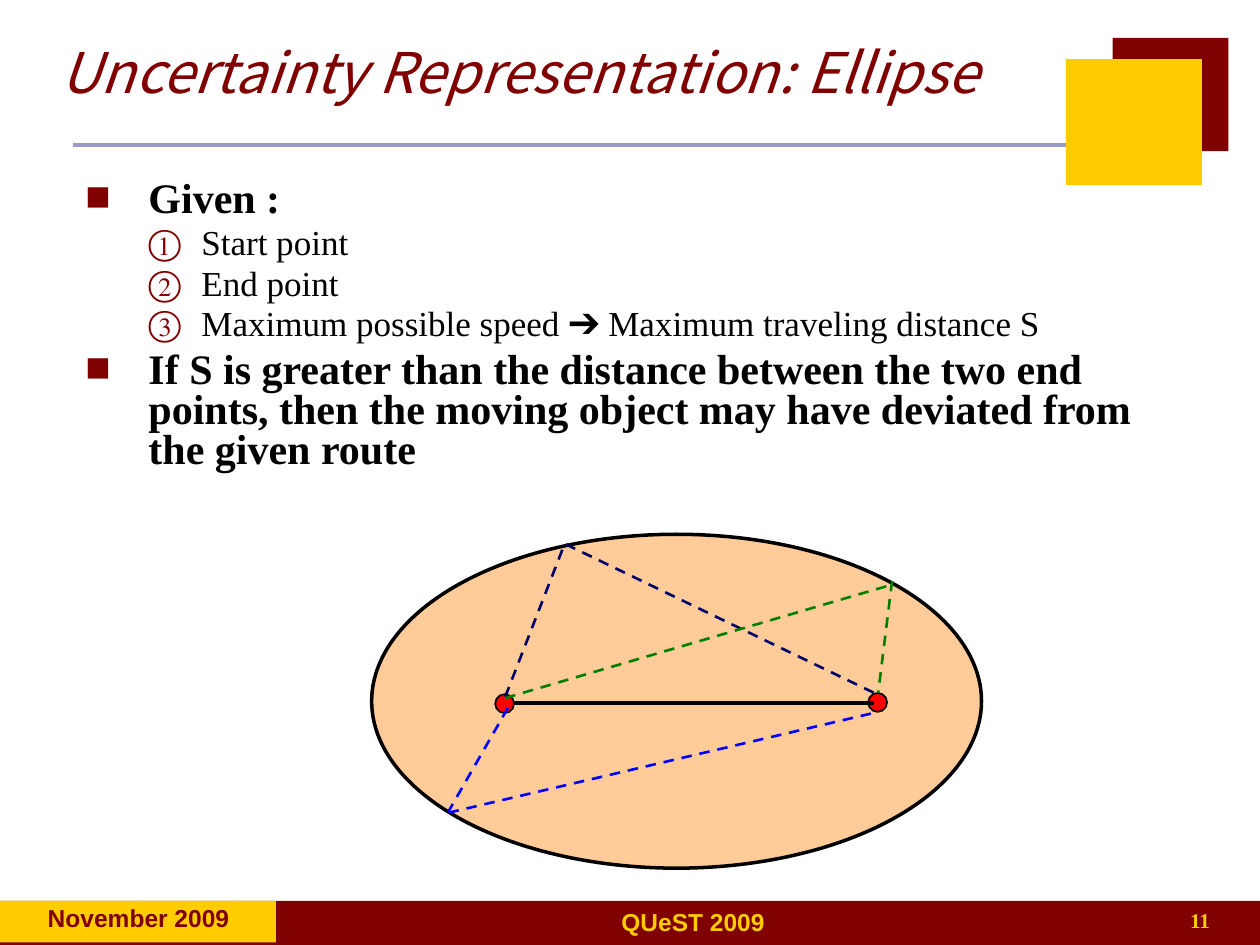
from dataclasses import dataclass

from lxml.etree import SubElement
from pptx import Presentation
from pptx.dml.color import RGBColor
from pptx.enum.dml import MSO_LINE
from pptx.enum.shapes import MSO_CONNECTOR, MSO_SHAPE
from pptx.enum.text import MSO_ANCHOR, MSO_AUTO_SIZE, PP_ALIGN
from pptx.oxml.ns import qn
from pptx.util import Inches, Pt


@dataclass(frozen=True)
class Theme:
    red: str = "800000"
    gold: str = "FFCC00"
    rule: str = "9999CC"
    peach: str = "FFCC99"
    dot: str = "FF0000"
    ink: str = "000000"
    navy: str = "000066"
    green: str = "008000"
    blue: str = "0000FF"
    sans: str = "Arial"
    serif: str = "Times New Roman"
    head: str = "Noto Sans CJK KR"
    title: int = 32
    main: int = 24
    sub: int = 20
    foot: int = 14
    page: int = 12


T = Theme()


def rgb(hue):
    return RGBColor.from_string(hue)


def place(shape, box):
    for key, val in zip(("left", "top", "width", "height"), box):
        setattr(shape, key, Inches(val))


def write(para, text, hue, **form):
    run = para.add_run()
    run.text = text
    run.font.color.rgb = rgb(hue)
    for key, val in form.items():
        setattr(run.font, key, val)


def block(slide, kind, box, fill, width=0):
    shape = slide.shapes.add_shape(kind, *map(Inches, box))
    shape.shadow.inherit = False
    shape.fill.solid()
    shape.fill.fore_color.rgb = rgb(fill)
    if width:
        shape.line.color.rgb = rgb(T.ink)
        shape.line.width = Pt(width)
    else:
        shape.line.fill.background()


def link(slide, start, end, hue, width, dash=None):
    line = slide.shapes.add_connector(
        MSO_CONNECTOR.STRAIGHT, *map(Inches, start + end))
    SubElement(line._element.spPr, qn("a:effectLst"))
    line.line.color.rgb = rgb(hue)
    line.line.width = Pt(width)
    if dash:
        line.line.dash_style = dash


def frame(slide, box):
    text = slide.shapes.add_textbox(*map(Inches, box)).text_frame
    text.word_wrap = True
    return text


def label(slide, box, text, hue, align, **form):
    para = frame(slide, box).paragraphs[0]
    para.alignment = align
    write(para, text, hue, bold=True, **form)


def bullet(para, left, hang, tag, **mark):
    props = para._p.get_or_add_pPr()
    props.set("marL", str(Inches(left)))
    props.set("indent", str(-Inches(hang)))
    tint = SubElement(props, qn("a:buClr"))
    SubElement(tint, qn("a:srgbClr"), val=T.red)
    if "char" in mark:
        SubElement(props, qn("a:buFont"), typeface=T.sans)
    SubElement(props, qn(tag), **mark)


def points(slide, box, items):
    text = frame(slide, box)
    for num, (level, words) in enumerate(items):
        para = text.add_paragraph() if num else text.paragraphs[0]
        if level:
            bullet(para, 0.92, 0.42, "a:buAutoNum", type="circleNumDbPlain")
        else:
            bullet(para, 0.5, 0.5, "a:buChar", char="■")
        size = T.sub if level else T.main
        form = {"level": level, "line_spacing": 0.8}
        if num:
            form["space_before"] = Pt(size * 0.2)
        for key, val in form.items():
            setattr(para, key, val)
        write(para, words, T.ink, name=T.serif, size=Pt(size), bold=not level)


def heading(slide, box, words):
    title = slide.shapes.title
    place(title, box)
    text = title.text_frame
    form = {"auto_size": MSO_AUTO_SIZE.NONE, "word_wrap": True,
            "vertical_anchor": MSO_ANCHOR.MIDDLE}
    for key, val in form.items():
        setattr(text, key, val)
    para = text.paragraphs[0]
    para.alignment = PP_ALIGN.LEFT
    write(para, words, T.red, name=T.head, size=Pt(T.title), italic=True)


def decor(slide):
    link(slide, (0.58, 1.15), (8.5, 1.15), T.rule, 2.25)
    for box, hue in (
        ((0, 7.15, 10, 0.35), T.red),
        ((0, 7.15, 2.19, 0.33), T.gold),
        ((8.83, 0.3, 0.92, 0.9), T.red),
        ((8.46, 0.47, 1.08, 1), T.gold),
    ):
        block(slide, MSO_SHAPE.RECTANGLE, box, hue)


def footer(slide):
    foot = {"name": T.sans, "size": Pt(T.foot)}
    label(slide, (1.89, 7.15, 7.22, 0.33), "QUeST 2009", T.gold,
          PP_ALIGN.CENTER, **foot)
    label(slide, (0.12, 7.12, 1.96, 0.33), "November 2009", T.red,
          PP_ALIGN.CENTER, **foot)
    label(slide, (7.62, 7.15, 2.08, 0.33), "11", T.gold,
          PP_ALIGN.RIGHT, name=T.serif, size=Pt(T.page))


def diagram(slide):
    # Ellipse with its two end points and the direct route
    block(slide, MSO_SHAPE.OVAL, (2.95, 4.24, 4.84, 2.65), T.peach, 2)
    for left, top in ((3.93, 5.51), (6.89, 5.5)):
        block(slide, MSO_SHAPE.OVAL, (left, top, 0.15, 0.15), T.dot, 1)
    link(slide, (4.08, 5.58), (6.94, 5.58), T.ink, 2)

    # Possible detours, two legs each
    for start, end, hue in (
        ((4.01, 5.53), (4.48, 4.32), T.navy),
        ((4.49, 4.32), (6.96, 5.51), T.navy),
        ((4.01, 5.54), (7.08, 4.64), T.green),
        ((7.08, 4.61), (6.97, 5.5), T.green),
        ((4.03, 5.62), (3.56, 6.44), T.blue),
        ((3.56, 6.45), (6.97, 5.65), T.blue),
    ):
        link(slide, start, end, hue, 1.5, MSO_LINE.DASH)


def main():
    deck = Presentation()
    deck.slide_width, deck.slide_height = Inches(10), Inches(7.5)
    slide = deck.slides.add_slide(deck.slide_layouts[5])
    decor(slide)
    footer(slide)
    heading(slide, (0.38, 0.06, 7.67, 1.01),
            "Uncertainty Representation: Ellipse")
    points(slide, (0.58, 1.39, 8.92, 2.11), (
        (0, "Given :"),
        (1, "Start point"),
        (1, "End point"),
        (1, "Maximum possible speed ➔ Maximum traveling distance S"),
        (0, "If S is greater than the distance between the two end points, "
            "then the moving object may have deviated from the given route"),
    ))
    diagram(slide)
    deck.save("out.pptx")


if __name__ == "__main__":
    main()
